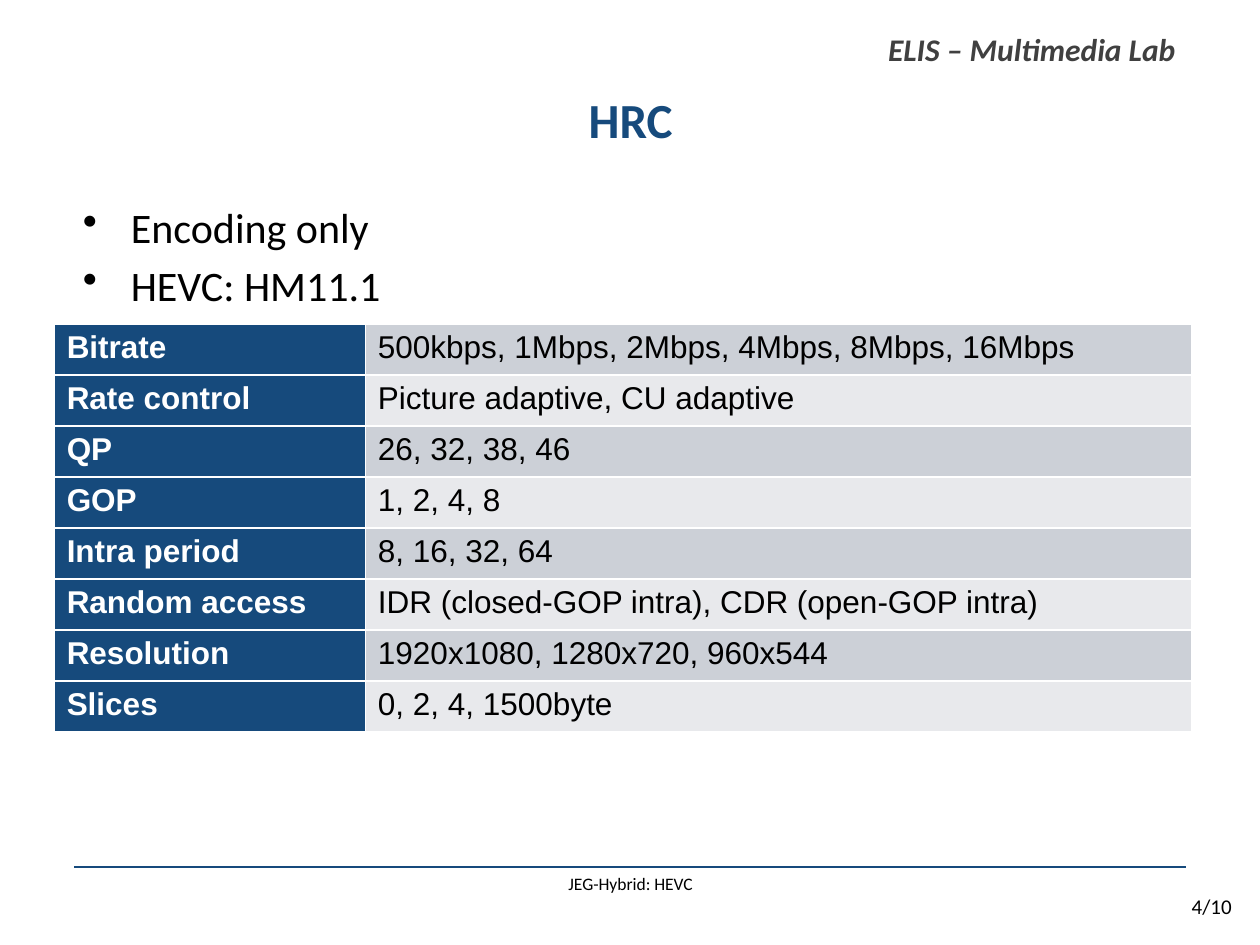
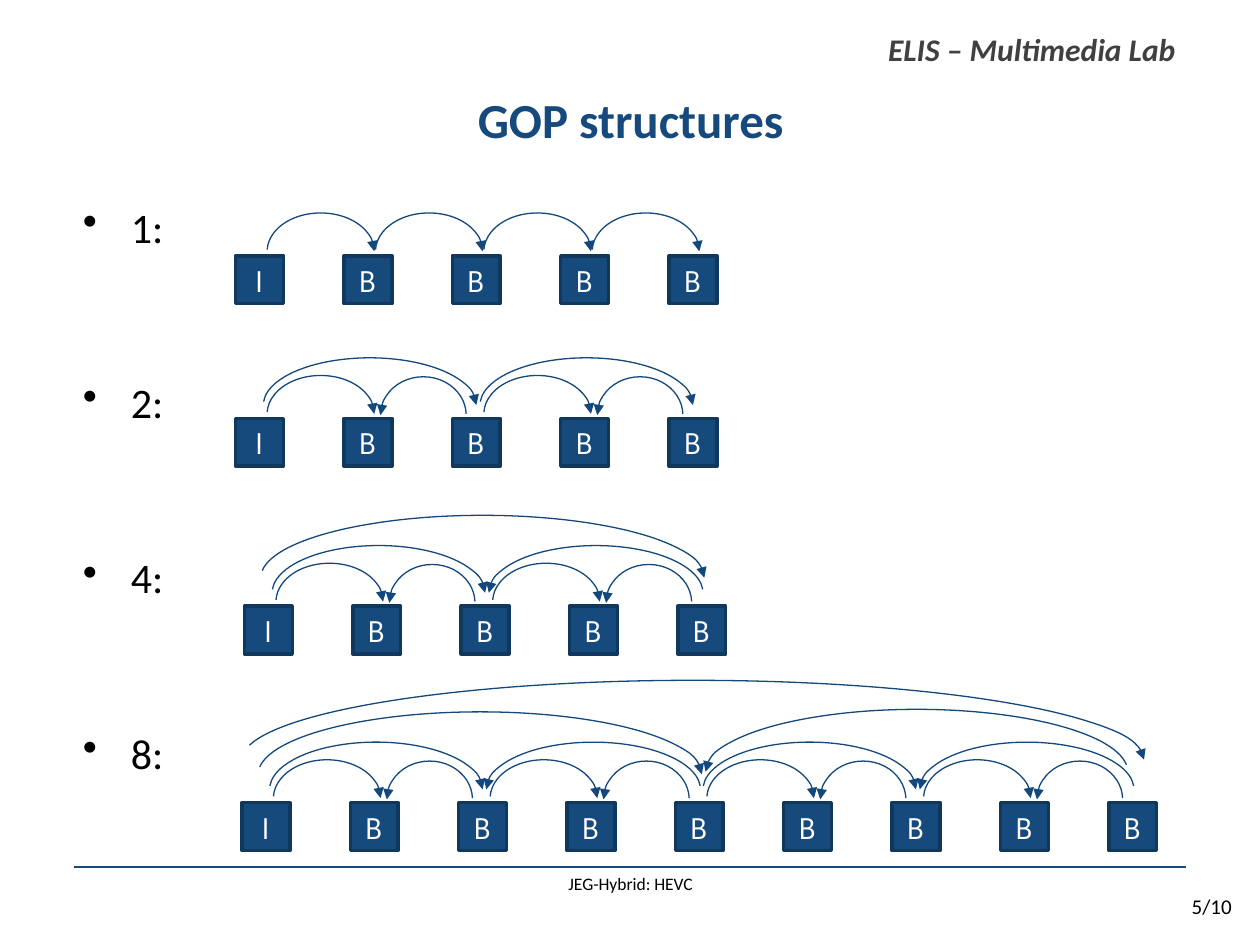
"""Build two slides on HEVC test conditions and GOP structures."""
import lxml.etree
import pptx
import pptx.dml.color
import pptx.enum.shapes
import pptx.enum.text
import pptx.oxml.ns
import pptx.util
from pptx.util import Inches, Pt

RGBColor = pptx.dml.color.RGBColor
ALIGN = pptx.enum.text.PP_ALIGN
ANCHOR = pptx.enum.text.MSO_ANCHOR
SHAPE = pptx.enum.shapes.MSO_SHAPE
qn = pptx.oxml.ns.qn

NAVY = RGBColor(0x16, 0x4A, 0x7C)
DARK_NAVY = RGBColor(0x10, 0x37, 0x5C)
ARROW_BLUE = RGBColor(0x13, 0x48, 0x7C)
GREY = RGBColor(0x40, 0x40, 0x40)
BLACK = RGBColor(0, 0, 0)
WHITE = RGBColor(0xFF, 0xFF, 0xFF)
BANDS = (RGBColor(0xCC, 0xD0, 0xD7), RGBColor(0xE8, 0xE9, 0xEC))

LAB = "ELIS – Multimedia Lab"
TOPIC = "JEG-Hybrid: HEVC"
PAGE_COUNT = 10

ENCODING_POINTS = ["Encoding only", "HEVC: HM11.1"]
PARAMETERS = [
    ("Bitrate", "500kbps, 1Mbps, 2Mbps, 4Mbps, 8Mbps, 16Mbps"),
    ("Rate control", "Picture adaptive, CU adaptive"),
    ("QP", "26, 32, 38, 46"),
    ("GOP", "1, 2, 4, 8"),
    ("Intra period", "8, 16, 32, 64"),
    ("Random access", "IDR (closed-GOP intra), CDR (open-GOP intra)"),
    ("Resolution", "1920x1080, 1280x720, 960x544"),
    ("Slices", "0, 2, 4, 1500byte"),
]
PARAMETER_COLUMNS = (2.47, 6.56)
PARAMETERS_HEIGHT = 3.24

GOPS = [
    dict(label="1:", left=1.87, top=2.03, frames="IBBBB",
         references=[(0, 1), (1, 2), (2, 3), (3, 4)]),
    dict(label="2:", left=1.87, top=3.32, frames="IBBBB",
         references=[(0, 2), (0, 1), (2, 1), (2, 4), (2, 3), (4, 3)]),
    dict(label="4:", left=1.94, top=4.81, frames="IBBBB",
         references=[(0, 4), (0, 2), (0, 1), (2, 1), (4, 2), (2, 3), (4, 3)]),
    dict(label="8:", left=1.92, top=6.37, frames="IBBBBBBBB",
         references=[(0, 8), (0, 4), (8, 4), (0, 2), (4, 2), (4, 6), (8, 6),
                     (0, 1), (2, 1), (2, 3), (4, 3), (4, 5), (6, 5), (6, 7), (8, 7)]),
]
FRAME_SIZE = 0.38
FRAME_PITCH = 0.86
ARC_BY_SPAN = {
    1: dict(offset=0.25, rise=0.34, width=0.85, height=0.61),
    -1: dict(offset=0.29, rise=0.33, width=0.68, height=0.61),
    2: dict(offset=0.22, rise=0.48, width=1.69, height=0.75),
    -2: dict(offset=0.22, rise=0.48, width=1.70, height=0.75),
    4: dict(offset=0.13, rise=0.72, width=3.52, height=0.99),
    -4: dict(offset=0.24, rise=0.74, width=3.35, height=0.99),
    8: dict(offset=0, rise=0.97, width=7.16, height=1.26),
}
ARC_START = 109.12


def add_element(parent, tag, **attributes):
    return lxml.etree.SubElement(parent, qn(tag), attributes)


def style(paragraph, size, color, name="Calibri", bold=False, italic=False):
    font = paragraph.font
    font.size, font.name = Pt(size), name
    font.bold, font.italic = bold, italic
    font.color.rgb = color


def add_label(slide, text, box, size, color, align=ALIGN.LEFT, wrap=True, **emphasis):
    frame = slide.shapes.add_textbox(*map(Inches, box)).text_frame
    frame.word_wrap = wrap
    paragraph = frame.paragraphs[0]
    paragraph.text, paragraph.alignment = text, align
    style(paragraph, size, color, **emphasis)


def add_page(deck, heading, number):
    slide = deck.slides.add_slide(deck.slide_layouts[5])
    title = slide.shapes.title
    title.left, title.top, title.width, title.height = map(Inches, (0.55, 0.58, 8.91, 0.73))
    title.text_frame.text = heading
    title.text_frame.vertical_anchor = ANCHOR.MIDDLE
    title.text_frame.paragraphs[0].alignment = ALIGN.CENTER
    style(title.text_frame.paragraphs[0], 28, NAVY, bold=True)

    add_label(slide, LAB, (6.95, 0.19, 2.5, 0.4), 18, GREY, wrap=False, bold=True, italic=True)
    add_label(slide, TOPIC, (0.59, 6.88, 8.83, 0.27), 10, BLACK, ALIGN.CENTER)
    add_label(slide, f"{number}/{PAGE_COUNT}", (9.36, 7.04, 0.72, 0.3), 12, BLACK)
    rule = slide.shapes.add_connector(pptx.enum.shapes.MSO_CONNECTOR.STRAIGHT,
                                      *map(Inches, (0.59, 6.88, 9.41, 6.88)))
    rule.line.width = Pt(1.5)
    rule.line.color.rgb = NAVY
    add_element(rule.element.spPr, "a:effectLst")
    return slide


def add_bullets(slide, points, gap):
    frame = slide.shapes.add_textbox(*map(Inches, (0.56, 1.42, 8.88, 5.36))).text_frame
    frame.word_wrap = True
    frame.margin_top = Inches(0.18)
    for index, point in enumerate(points):
        paragraph = frame.add_paragraph() if index else frame.paragraphs[0]
        paragraph.text = point
        properties = paragraph._p.get_or_add_pPr()
        properties.set("marL", str(Inches(0.38)))
        properties.set("indent", str(-Inches(0.38)))
        add_element(properties, "a:buChar", char="•")
        if index:
            paragraph.space_before = Pt(gap)
        style(paragraph, 24, BLACK)


def fill_cell(cell, text, fill, color, bold):
    cell.text = text
    style(cell.text_frame.paragraphs[0], 18, color, "Arial", bold)
    properties = cell._tc.get_or_add_tcPr()
    for side in ("a:lnL", "a:lnR", "a:lnT", "a:lnB"):
        border = add_element(properties, side, w=str(Pt(1)))
        add_element(add_element(border, "a:solidFill"), "a:srgbClr", val=str(WHITE))
    cell.fill.solid()
    cell.fill.fore_color.rgb = fill


def add_parameters(slide):
    table = slide.shapes.add_table(
        len(PARAMETERS), len(PARAMETER_COLUMNS), Inches(0.43), Inches(2.57),
        Inches(sum(PARAMETER_COLUMNS)), Inches(PARAMETERS_HEIGHT)).table
    table.first_row = table.horz_banding = False
    table.first_col = True
    for column, width in zip(table.columns, PARAMETER_COLUMNS):
        column.width = Inches(width)
    for row, (parameter, values) in enumerate(PARAMETERS):
        fill_cell(table.cell(row, 0), parameter, NAVY, WHITE, True)
        fill_cell(table.cell(row, 1), values, BANDS[row % 2], BLACK, False)


def add_frame(slide, letter, left, top):
    box = slide.shapes.add_shape(SHAPE.RECTANGLE,
                                 *map(Inches, (left, top, FRAME_SIZE, FRAME_SIZE)))
    box.shadow.inherit = False
    box.fill.solid()
    box.fill.fore_color.rgb = NAVY
    box.line.width = Pt(2)
    box.line.color.rgb = DARK_NAVY
    content = box.text_frame
    content.margin_left = content.margin_right = content.margin_top = content.margin_bottom = 0
    content.vertical_anchor = ANCHOR.MIDDLE
    content.text = letter
    content.paragraphs[0].alignment = ALIGN.CENTER
    style(content.paragraphs[0], 18, WHITE, "League Spartan")


def add_reference(slide, gop, source, target):
    curve = ARC_BY_SPAN[target - source]
    left = gop["left"] + FRAME_PITCH * min(source, target) + curve["offset"]
    top = gop["top"] - curve["rise"]
    arc = slide.shapes.add_shape(
        SHAPE.ARC, *map(Inches, (left, top, curve["width"], curve["height"])))
    arc.shadow.inherit = False
    arc.adjustments[0], arc.adjustments[1] = ARC_START, 0
    arc.fill.background()
    arc.line.width = Pt(0.75)
    arc.line.color.rgb = ARROW_BLUE
    add_element(arc.element.spPr.find(qn("a:ln")), "a:tailEnd", type="triangle")
    if target < source:
        arc.element.spPr.find(qn("a:xfrm")).set("flipH", "1")


def main():
    deck = pptx.Presentation()
    deck.slide_width, deck.slide_height = Inches(10), Inches(7.5)

    hrc = add_page(deck, "HRC", 4)
    add_bullets(hrc, ENCODING_POINTS, 4.2)
    add_parameters(hrc)

    structures = add_page(deck, "GOP structures", 5)
    add_bullets(structures, [gop["label"] for gop in GOPS], 71.3)
    for gop in GOPS:
        for index, letter in enumerate(gop["frames"]):
            add_frame(structures, letter, gop["left"] + FRAME_PITCH * index, gop["top"])
        for source, target in gop["references"]:
            add_reference(structures, gop, source, target)

    deck.save("out.pptx")


if __name__ == "__main__":
    main()
